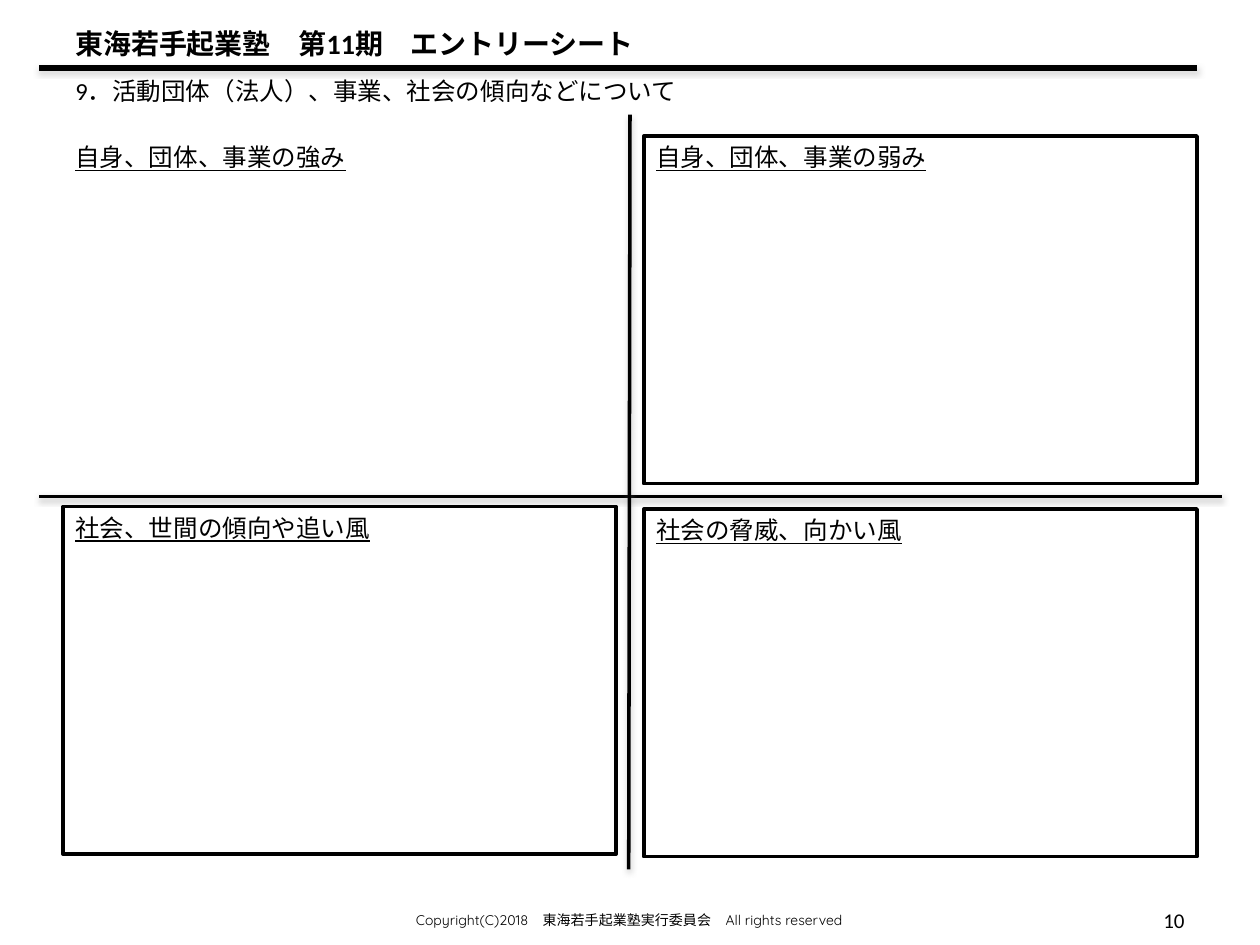
from lxml import etree
from pptx import Presentation
from pptx import util as u
from pptx.dml.color import RGBColor
from pptx.enum import shapes, text
from pptx.oxml import parse_xml
from pptx.oxml.ns import nsdecls

THEME = {
    "ink": RGBColor(0, 0, 0), "paper": RGBColor(255, 255, 255), "shadow": "808080",
    "body": "Calibri", "footer": "Quicksand",
    "header_pt": 16, "text_pt": 14, "number_pt": 12, "footer_pt": 8,
    "rule_pt": 3, "line_pt": 2,
}
TOP, MIDDLE = text.MSO_ANCHOR.TOP, text.MSO_ANCHOR.MIDDLE
LEFT, CENTER, RIGHT = text.PP_ALIGN.LEFT, text.PP_ALIGN.CENTER, text.PP_ALIGN.RIGHT

prs = Presentation()
prs.slide_width, prs.slide_height = u.Inches(10), u.Inches(7.5)
s = prs.slides.add_slide(prs.slide_layouts[6])

# Grid: 100 columns by 100 rows
COL, ROW = prs.slide_width / 100, prs.slide_height / 100


def place(*cells):
    """Turn column, row pairs into slide lengths."""
    return [round(c * unit) for c, unit in zip(cells, (COL, ROW) * 2)]


def write(sp, words, size, anchor=TOP, align=LEFT, **font):
    tf = sp.text_frame
    tf.word_wrap, tf.vertical_anchor = True, anchor
    p = tf.paragraphs[0]
    p.alignment = align
    r = p.add_run()
    r.text = words
    r.font.color.rgb = THEME["ink"]
    for name, value in {"name": THEME["body"], "size": u.Pt(size), **font}.items():
        setattr(r.font, name, value)


# Header, title and footer
labels = [
    ((5, 2.13, 90, 9.87), "東海若手起業塾\u3000第11期\u3000エントリーシート", THEME["header_pt"], {"bold": True}),
    ((5, 7.2, 90, 4.8), "9．活動団体（法人）、事業、社会の傾向などについて", THEME["text_pt"], {"anchor": MIDDLE}),
    ((71.7, 94.67, 23.3, 5.33), "10", THEME["number_pt"], {"anchor": MIDDLE, "align": RIGHT}),
    ((28.3, 94.67, 43.3, 5.33), "Copyright(C)2018　東海若手起業塾実行委員会　All rights reserved",
     THEME["footer_pt"], {"anchor": MIDDLE, "align": CENTER, "name": THEME["footer"]}),
]
for cells, words, size, style in labels:
    write(s.shapes.add_textbox(*place(*cells)), words, size, **style)

# Header rule and the cross between the quadrants
lines = [
    ((3.1, 7.2, 95, 7.2), THEME["rule_pt"]),
    ((3.1, 52.53, 97, 52.53), THEME["line_pt"]),
    ((50, 12.13, 49.9, 92), THEME["line_pt"]),
]
for ends, width in lines:
    cx = s.shapes.add_connector(shapes.MSO_CONNECTOR.STRAIGHT, *place(*ends))
    cx.line.color.rgb, cx.line.width = THEME["ink"], u.Pt(width)
    effects = parse_xml(f"<a:effectLst {nsdecls('a')}/>")
    shadow = etree.SubElement(effects, effects.tag.replace("effectLst", "outerShdw"),
                              blurRad="40000", dist="20000", dir="5400000", rotWithShape="0")
    colour = etree.SubElement(shadow, effects.tag.replace("effectLst", "srgbClr"), val=THEME["shadow"])
    etree.SubElement(colour, effects.tag.replace("effectLst", "alpha"), val="38000")
    cx._element.spPr.append(effects)

# Four quadrants; the first has no frame
quadrants = [
    (5, 14.4, "自身、団体、事業の強み", False),
    (51.1, 14.4, "自身、団体、事業の弱み", True),
    (5, 53.6, "社会、世間の傾向や追い風", True),
    (51.1, 53.87, "社会の脅威、向かい風", True),
]
for col, row, words, framed in quadrants:
    sp = s.shapes.add_shape(shapes.MSO_SHAPE.RECTANGLE, *place(col, row, 43.9, 36.8))
    sp.shadow.inherit = False
    sp.fill.solid()
    sp.fill.fore_color.rgb = THEME["paper"]
    if framed:
        sp.line.color.rgb, sp.line.width = THEME["ink"], u.Pt(THEME["line_pt"])
    else:
        sp.line.fill.background()
    write(sp, words, THEME["text_pt"], underline=True)

prs.save("out.pptx")
